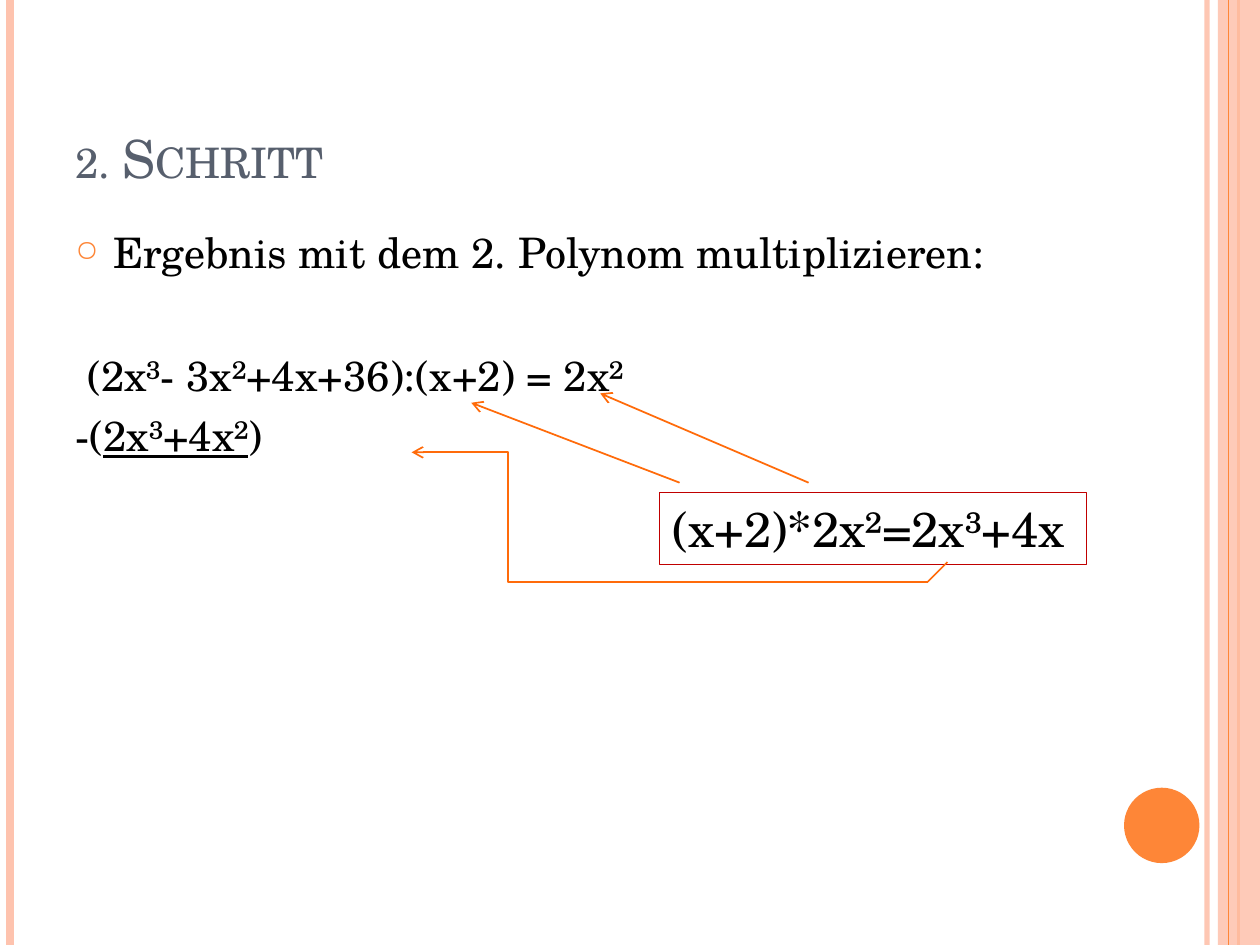
import pptx
import pptx.util
import pptx.dml.color
import pptx.enum.shapes
import pptx.enum.text
import pptx.oxml.ns
import lxml.etree
from pptx.util import Cm, Pt

RGBColor = pptx.dml.color.RGBColor
PEACH = RGBColor(0xFE, 0xC3, 0xAE)
ORANGE = RGBColor(0xFE, 0x86, 0x37)
ARROW_ORANGE = RGBColor(0xFF, 0x6B, 0x0A)
SLATE = RGBColor(0x57, 0x5F, 0x6D)
DARK_RED = RGBColor(0xC0, 0x00, 0x00)
BLACK = RGBColor(0x00, 0x00, 0x00)
FONT = "TeX Gyre Schola"

SHAPES = pptx.enum.shapes.MSO_SHAPE
CONNECTORS = pptx.enum.shapes.MSO_CONNECTOR
ANCHORS = pptx.enum.text.MSO_ANCHOR
LEFT = pptx.enum.text.PP_ALIGN.LEFT
HEIGHT = 19.05


def add_element(parent, tag, **attributes):
    element = lxml.etree.SubElement(parent, pptx.oxml.ns.qn(tag))
    for name, value in attributes.items():
        element.set(name, str(value))
    return element


def set_opacity(properties, percent):
    color = next(properties.iter(pptx.oxml.ns.qn("a:srgbClr")))
    add_element(color, "a:alpha", val=percent * 1000)


def add_line(slide, start, end, color, width, kind=CONNECTORS.STRAIGHT,
             arrow=False, opacity=None):
    line = slide.shapes.add_connector(kind, *map(Cm, start + end))
    line.line.color.rgb = color
    line.line.width = Pt(width)
    properties = line._element.spPr
    if opacity:
        set_opacity(properties, opacity)
    if arrow:
        add_element(line.line._get_or_add_ln(), "a:tailEnd", type="arrow")
    add_element(properties, "a:effectLst")
    return line


def add_plain_shape(slide, kind, left, top, width, height, fill=None):
    shape = slide.shapes.add_shape(kind, Cm(left), Cm(top), Cm(width), Cm(height))
    shape.shadow.inherit = False
    shape.line.fill.background()
    if fill is None:
        shape.fill.background()
    else:
        shape.fill.solid()
        shape.fill.fore_color.rgb = fill
    return shape


def add_run(paragraph, text, size, color=BLACK, underline=None):
    run = paragraph.add_run()
    run.text = text
    run.font.name = FONT
    run.font.size = Pt(size)
    run.font.color.rgb = color
    run.font.underline = underline
    return run


def add_bullet(paragraph):
    properties = paragraph._p.get_or_add_pPr()
    color = add_element(properties, "a:buClr")
    add_element(color, "a:srgbClr", val=ORANGE)
    add_element(properties, "a:buSzPct", val=70000)
    add_element(properties, "a:buChar", char="○")


def add_decoration(slide):
    add_line(slide, (24.33, 0), (24.33, HEIGHT), PEACH, 3, opacity=93)
    add_line(slide, (0.21, 0), (0.21, HEIGHT), PEACH, 4.5)
    add_line(slide, (24.97, 0), (24.97, HEIGHT), ORANGE, 1.5)
    band = add_plain_shape(slide, SHAPES.RECTANGLE, 24.55, 0, 0.85, HEIGHT, PEACH)
    set_opacity(band._element.spPr, 87)
    add_line(slide, (24.77, 0), (24.77, HEIGHT), ORANGE, 0.75)
    add_plain_shape(slide, SHAPES.OVAL, 22.66, 15.88, 1.52, 1.52, ORANGE)


def format_title(slide):
    title = slide.shapes.title
    title.left, title.top, title.width, title.height = map(Cm, (1.27, 0.76, 20.75, 3.18))
    frame = title.text_frame
    frame.auto_size = pptx.enum.text.MSO_AUTO_SIZE.NONE
    frame.vertical_anchor = ANCHORS.BOTTOM
    paragraph = frame.paragraphs[0]
    paragraph.alignment = LEFT
    run = add_run(paragraph, "2. Schritt", 30, SLATE)
    run.font._element.set("cap", "small")


def add_calculation(slide):
    box = slide.shapes.add_textbox(Cm(1.27), Cm(4.45), Cm(20.75), Cm(13.54))
    frame = box.text_frame
    frame.word_wrap = True
    # Each line: space before in points, then (text, underlined) runs
    lines = [
        (6, [("Ergebnis mit dem 2. Polynom multiplizieren:", None)]),
        (41, [(" (2x³- 3x²+4x+36):(x+2) = 2x²", None)]),
        (6, [("-(", None), ("2x³+4x²", True), (")", None)]),
    ]
    for index, (space, runs) in enumerate(lines):
        paragraph = frame.add_paragraph() if index else frame.paragraphs[0]
        paragraph.space_before = Pt(space)
        properties = paragraph._p.get_or_add_pPr()
        properties.set("marL", str(Cm(0.76)))
        properties.set("indent", str(-Cm(0.76)))
        if index == 0:
            add_bullet(paragraph)
        for text, underline in runs:
            add_run(paragraph, text, 24, underline=underline)


def add_product_box(slide):
    box = add_plain_shape(slide, SHAPES.RECTANGLE, 13.3, 9.93, 8.61, 1.45)
    box.line.color.rgb = DARK_RED
    box.line.width = Pt(0.75)
    frame = box.text_frame
    frame.word_wrap = True
    frame.vertical_anchor = ANCHORS.TOP
    paragraph = frame.paragraphs[0]
    paragraph.alignment = LEFT
    add_run(paragraph, "(x+2)*2x²=2x³+4x", 28)


def add_arrows(slide):
    # From the product to its two factors
    for start, end in [((13.7, 9.73), (9.5, 8.12)), ((16.3, 9.73), (12.1, 7.93))]:
        add_line(slide, start, end, ARROW_ORANGE, 1, arrow=True)
    # From the product back to the subtraction line
    corner = (18.7, 11.73)
    elbow = add_line(slide, corner, (8.3, 9.12), ARROW_ORANGE, 1,
                     kind=CONNECTORS.ELBOW, arrow=True)
    guides = elbow._element.spPr.prstGeom.get_or_add_avLst()
    add_element(guides, "a:gd", name="adj1", fmla="val 81300")
    add_line(slide, corner, (19.1, 11.33), ARROW_ORANGE, 1)


def main():
    presentation = pptx.Presentation()
    presentation.slide_width, presentation.slide_height = Cm(25.4), Cm(HEIGHT)
    slide = presentation.slides.add_slide(presentation.slide_layouts[5])
    add_decoration(slide)
    format_title(slide)
    add_calculation(slide)
    add_product_box(slide)
    add_arrows(slide)
    presentation.save("out.pptx")


if __name__ == "__main__":
    main()
